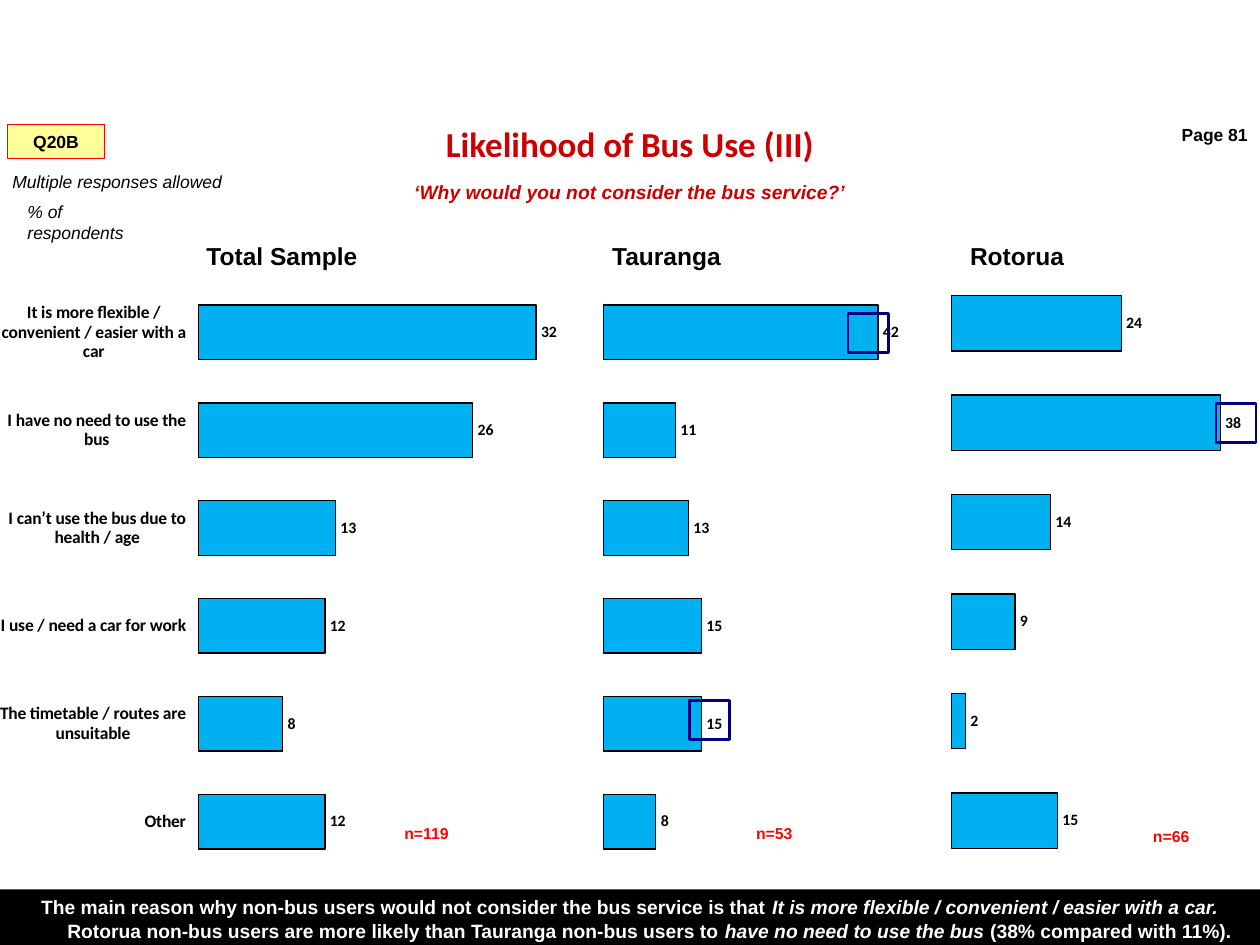
from pptx import Presentation
from pptx.chart.data import CategoryChartData
from pptx.dml.color import RGBColor
from pptx.enum.chart import XL_CHART_TYPE as ChartType, XL_LABEL_POSITION as LabelPosition
from pptx.enum.chart import XL_TICK_MARK as TickMark
from pptx.enum.shapes import MSO_SHAPE as ShapeKind
from pptx.enum.text import MSO_ANCHOR as Anchor, PP_ALIGN as Align
from pptx.oxml import parse_xml
from pptx.oxml.ns import nsdecls
from pptx.util import Inches, Pt

COLORS = {"black": "000000", "white": "FFFFFF", "title": "CC0000", "red": "FF0000",
          "yellow": "FFFF99", "bar": "00B0F0", "navy": "000080"}
COLUMNS, ROWS = 100, 75

REASONS = ["Other", "The timetable / routes are unsuitable", "I use / need a car for work",
           "I can’t use the bus due to health / age", "I have no need to use the bus",
           "It is more flexible / convenient / easier with a car"]

PANELS = [
    {"name": "Rotorua", "values": [15, 2, 9, 14, 38, 24], "maximum": 40,
     "area": (62.6, 20.2, 37.4, 50.4), "plot_width": 0.601, "heading": 76,
     "sample": "n=66", "sample_at": (89.4, 65.1)},
    {"name": "Tauranga", "values": [8, 15, 15, 13, 11, 42], "maximum": 45,
     "area": (35, 21, 37.4, 49.6), "plot_width": 0.624, "heading": 47.6,
     "sample": "n=53", "sample_at": (57.9, 64.9)},
    {"name": "Total Sample", "values": [12, 8, 12, 13, 26, 32], "maximum": 35,
     "area": (0, 21, 45.3, 49.6), "plot_width": 0.65, "heading": 15.4,
     "sample": "n=119", "sample_at": (30.3, 64.9), "show_reasons": True},
]
HIGHLIGHTS = [(67.3, 24.9), (96.5, 32), (54.7, 55.6)]
FINDINGS = [
    ("The main reason why non-bus users would not consider the bus service is that ", False),
    ("It is more flexible / convenient / easier with a car. ", True),
    ("Rotorua non-bus users are more likely than Tauranga non-bus users to ", False),
    ("have no need to use the bus ", True),
    ("(38% compared with 11%).", False),
]


def rgb(name):
    return RGBColor.from_string(COLORS[name])


class SurveySlide:
    font = "Arial"
    chart_font = "Calibri"

    def __init__(self, presentation):
        self.cell_width = presentation.slide_width / COLUMNS
        self.cell_height = presentation.slide_height / ROWS
        self.slide = presentation.slides.add_slide(presentation.slide_layouts[5])
        self.shapes = self.slide.shapes

    def place(self, left, top, width, height):
        return (round(left * self.cell_width), round(top * self.cell_height),
                round(width * self.cell_width), round(height * self.cell_height))

    def style(self, font, size, color="black", bold=True, italic=False, name=None):
        font.name, font.size = name or self.font, Pt(size)
        font.bold, font.italic = bold, italic
        font.color.rgb = rgb(color)

    def fill_text(self, shape, runs, size, align=Align.LEFT, anchor=Anchor.TOP, wrap=True,
                  **style):
        frame = shape.text_frame
        frame.word_wrap, frame.vertical_anchor = wrap, anchor
        paragraph = frame.paragraphs[0]
        paragraph.alignment = align
        for text, italic in runs:
            run = paragraph.add_run()
            run.text = text
            self.style(run.font, size, italic=italic, **style)
        return paragraph

    def title(self, text, area):
        shape = self.shapes.title
        shape.left, shape.top, shape.width, shape.height = self.place(*area)
        self.fill_text(shape, [(text, False)], 20, Align.CENTER, color="title",
                       name=self.chart_font)

    def text(self, text, area, size, italic=False, **style):
        shape = self.shapes.add_textbox(*self.place(*area))
        self.fill_text(shape, [(text, italic)], size, **style)
        return shape

    def box(self, area, fill=None, line=None, weight=0.75):
        shape = self.shapes.add_shape(ShapeKind.RECTANGLE, *self.place(*area))
        shape.shadow.inherit = False
        if fill:
            shape.fill.solid()
            shape.fill.fore_color.rgb = rgb(fill)
        else:
            shape.fill.background()
        if line:
            shape.line.color.rgb = rgb(line)
            shape.line.width = Pt(weight)
        else:
            shape.line.fill.background()
        return shape

    def bar_chart(self, values, maximum, area, plot_width, show_reasons=False):
        data = CategoryChartData(number_format="0")
        data.categories = REASONS if show_reasons else [str(i + 1) for i in range(len(values))]
        data.add_series("Series 1", values)
        chart = self.shapes.add_chart(ChartType.BAR_CLUSTERED, *self.place(*area), data).chart
        chart.has_legend = chart.has_title = False
        self.style(chart.font, 18, bold=False, name=self.chart_font)

        value_axis, category_axis = chart.value_axis, chart.category_axis
        value_axis.minimum_scale, value_axis.maximum_scale = 0, maximum
        value_axis.has_major_gridlines = value_axis.visible = False
        category_axis.visible = show_reasons
        if show_reasons:
            category_axis.major_tick_mark = TickMark.CROSS
            category_axis.format.line.fill.background()
            self.style(category_axis.tick_labels.font, 10, name=self.chart_font)

        plot = chart.plots[0]
        plot.gap_width, plot.vary_by_categories = 80, False
        bars = plot.series[0].format
        bars.fill.solid()
        bars.fill.fore_color.rgb = rgb("bar")
        bars.line.color.rgb = rgb("black")
        bars.line.width = Pt(0.75)
        plot.has_data_labels = True
        labels = plot.data_labels
        labels.show_value, labels.position = True, LabelPosition.OUTSIDE_END
        labels.number_format, labels.number_format_is_linked = "0", False
        self.style(labels.font, 9, name=self.chart_font)
        self.fix_plot_area(chart, plot_width)

    def fix_plot_area(self, chart, width):
        plot_area = chart.element.chart.plotArea
        for layout in plot_area.xpath("c:layout"):
            plot_area.remove(layout)
        bounds = {"x": 0.345, "y": 0.03, "w": width, "h": 0.94}
        modes = "".join(f'<c:{key}Mode val="edge"/>' for key in "xy")
        sizes = "".join(f'<c:{key} val="{value}"/>' for key, value in bounds.items())
        plot_area.insert(0, parse_xml(
            f'<c:layout {nsdecls("c")}><c:manualLayout><c:layoutTarget val="inner"/>'
            f'{modes}{sizes}</c:manualLayout></c:layout>'))

    def findings(self, runs, area):
        bar = self.box(area, "black")
        paragraph = self.fill_text(bar, runs, 11, Align.CENTER, color="white")
        properties = paragraph._p.get_or_add_pPr()
        properties.set("marL", str(Inches(0.31)))
        properties.set("indent", str(-Inches(0.31)))


def main():
    presentation = Presentation()
    presentation.slide_width, presentation.slide_height = Inches(10), Inches(7.5)
    page = SurveySlide(presentation)

    page.title("Likelihood of Bus Use (III)", (0, 9.2, 100, 7.1))
    for panel in PANELS:
        page.bar_chart(panel["values"], panel["maximum"], panel["area"],
                       panel["plot_width"], panel.get("show_reasons", False))
    page.findings(FINDINGS, (0, 70.6, 100, 4.7))

    page.text("% of respondents", (1.2, 15.5, 12.7, 2.7), 10, True, bold=False, wrap=False)
    page.text("Multiple responses allowed", (0, 13.1, 18.6, 2.7), 10, True, bold=False, wrap=False)
    for panel in PANELS:
        page.text(panel["name"], (panel["heading"], 18.6, 18.9, 2.5), 14)
        page.text(panel["sample"], (*panel["sample_at"], 7.1, 2.5), 9,
                  align=Align.CENTER, color="red")

    question = page.box((0.6, 9.9, 7.7, 2.7), "yellow", "red")
    page.fill_text(question, [("Q20B", False)], 10, Align.CENTER, Anchor.MIDDLE)
    for left, top in HIGHLIGHTS:
        page.box((left, top, 3.2, 3.1), line="navy", weight=1.5)

    subtitle = page.text("‘Why would you not consider the bus service?’", (0, 10.7, 100, 7.1), 11,
                         True, align=Align.CENTER, anchor=Anchor.MIDDLE, color="title")
    subtitle.text_frame.margin_top = Inches(0.24)
    page.text("Page 81", (76.7, 9.2, 23.3, 3), 10, align=Align.RIGHT, anchor=Anchor.MIDDLE)

    presentation.save("out.pptx")


if __name__ == "__main__":
    main()
